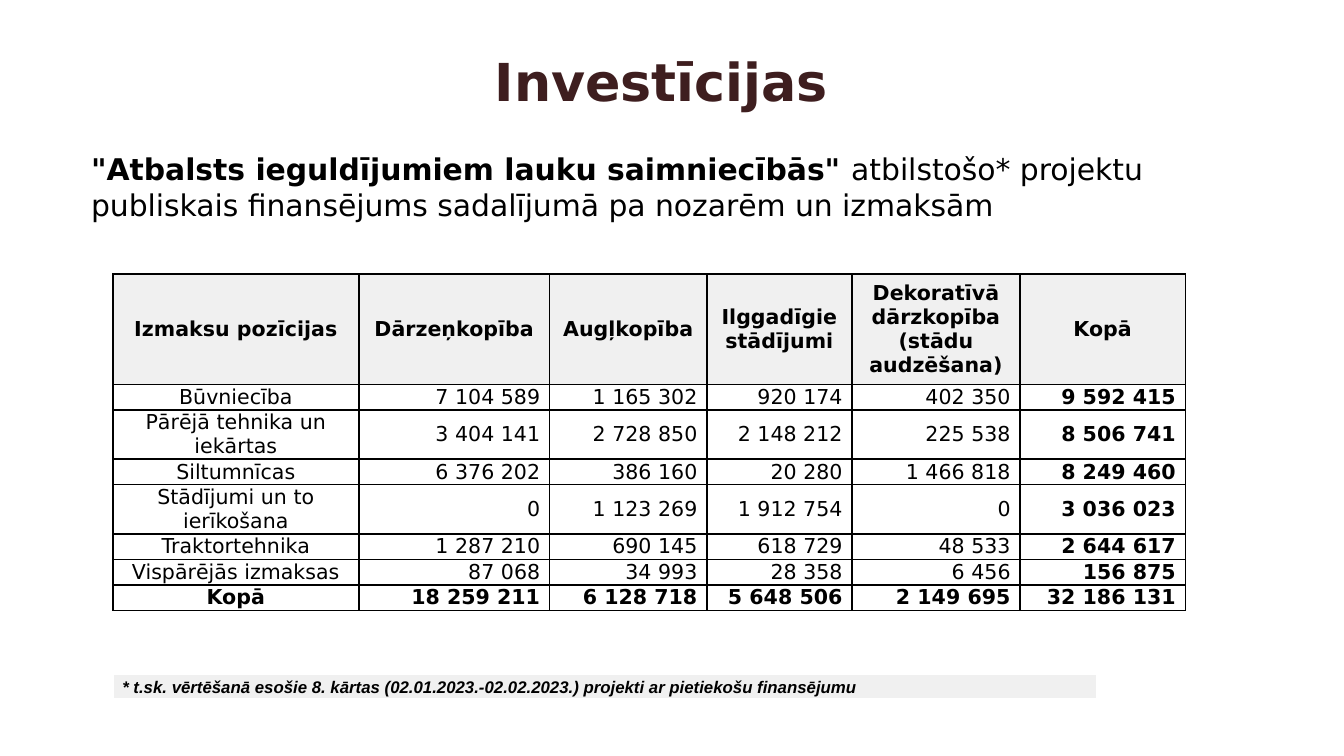
from lxml import etree
from pptx import Presentation
from pptx.dml.color import RGBColor
from pptx.enum.text import MSO_ANCHOR, PP_ALIGN
from pptx.oxml.ns import qn
from pptx.util import Inches, Pt

MIDDLE = MSO_ANCHOR.MIDDLE
LEFT, CENTER, RIGHT = PP_ALIGN.LEFT, PP_ALIGN.CENTER, PP_ALIGN.RIGHT
SANS = "DejaVu Sans"
COLORS = {"title": "3E1E1F", "text": "000000", "fill": "F0F0F0", "white": "FFFFFF"}


def style(para, size, color="text", bold=None, align=LEFT, face=SANS):
    para.alignment = align
    font = para.font
    font.name, font.size, font.bold = face, Pt(size), bold
    font.color.rgb = RGBColor.from_string(COLORS[color])


def frame(cell, sides, color, fill=None):
    cell.margin_left = cell.margin_right = Inches(0.07)
    cell.margin_top = cell.margin_bottom = 0
    cell.vertical_anchor = MIDDLE
    props = cell._tc.get_or_add_tcPr()
    for side, width in sides.items():
        line = etree.SubElement(props, qn(f"a:ln{side}"), w=str(Pt(width)))
        paint = etree.SubElement(line, qn("a:solidFill"))
        etree.SubElement(paint, qn("a:srgbClr"), val=COLORS[color])
    if fill:
        cell.fill.solid()
        cell.fill.fore_color.rgb = RGBColor.from_string(COLORS[fill])
    else:
        cell.fill.background()


deck = Presentation()
deck.slide_width = Inches(10)
deck.slide_height = Inches(10 * 9 / 16)
slide = deck.slides.add_slide(deck.slide_layouts[6])
shapes = slide.shapes

title = shapes.add_textbox(Inches(0.42), Inches(0.13), Inches(9), Inches(0.94)).text_frame
title.word_wrap = True
title.vertical_anchor = MIDDLE
title.text = "Investīcijas"
style(title.paragraphs[0], 28, "title", True, CENTER)

body = shapes.add_textbox(Inches(0.58), Inches(1.07), Inches(9), Inches(3.71)).text_frame
body.word_wrap = True
intro = body.paragraphs[0]
intro.space_before = Pt(3)
style(intro, 16)
lead = intro.add_run()
lead.text = '"Atbalsts ieguldījumiem lauku saimniecībās" '
lead.font.bold = True
rest = intro.add_run()
rest.text = "atbilstošo* projektu publiskais finansējums sadalījumā pa nozarēm un izmaksām"

rows = [
    [""] * 6,
    ["Izmaksu pozīcijas", "Dārzeņkopība", "Augļkopība", "Ilggadīgie stādījumi",
     "Dekoratīvā dārzkopība (stādu audzēšana)", "Kopā"],
    ["Būvniecība", "7 104 589", "1 165 302", "920 174", "402 350", "9 592 415"],
    ["Pārējā tehnika un iekārtas", "3 404 141", "2 728 850", "2 148 212", "225 538", "8 506 741"],
    ["Siltumnīcas", "6 376 202", "386 160", "20 280", "1 466 818", "8 249 460"],
    ["Stādījumi un to ierīkošana", "0", "1 123 269", "1 912 754", "0", "3 036 023"],
    ["Traktortehnika", "1 287 210", "690 145", "618 729", "48 533", "2 644 617"],
    ["Vispārējās izmaksas", "87 068", "34 993", "28 358", "6 456", "156 875"],
    ["Kopā", "18 259 211", "6 128 718", "5 648 506", "2 149 695", "32 186 131"],
]
widths = [1.83, 1.42, 1.17, 1.08, 1.25, 1.23]
head, last = 1, len(rows) - 1

costs = shapes.add_table(len(rows), len(widths), Inches(0.84), Inches(1.85),
                         Inches(sum(widths)), Inches(2.71)).table
costs.first_row = costs.horz_banding = False
for col, width in zip(costs.columns, widths):
    col.width = Inches(width)
for r, row in enumerate(rows):
    costs.rows[r].height = Inches(0.82 if r == head else 0.19)
    for c, text in enumerate(row):
        cell = costs.cell(r, c)
        sides = dict.fromkeys("LRTB" if r else "B", 1)
        frame(cell, sides, "text", "fill" if r == head else None)
        if text:
            cell.text = text
        para = cell.text_frame.paragraphs[0]
        bold = r in (head, last) or c == len(widths) - 1
        style(para, 11, bold=bold, align=CENTER if c == 0 or r == head else RIGHT)
        if not text:
            etree.SubElement(para._p, qn("a:endParaRPr"), sz="1100")

note = shapes.add_table(1, 1, Inches(0.84), Inches(5.02), Inches(7.32), Inches(0.19)).table
note.first_row = note.horz_banding = False
note.rows[0].height = Inches(0.19)
cell = note.cell(0, 0)
cell.text = ("* t.sk. vērtēšanā esošie 8. kārtas (02.01.2023.-02.02.2023.) "
             "projekti ar pietiekošu finansējumu")
frame(cell, {"L": 1, "R": 1, "T": 1, "B": 3}, "white", "fill")
para = cell.text_frame.paragraphs[0]
style(para, 9, bold=True, face="Arial")
para.font.italic = True

deck.save("out.pptx")
